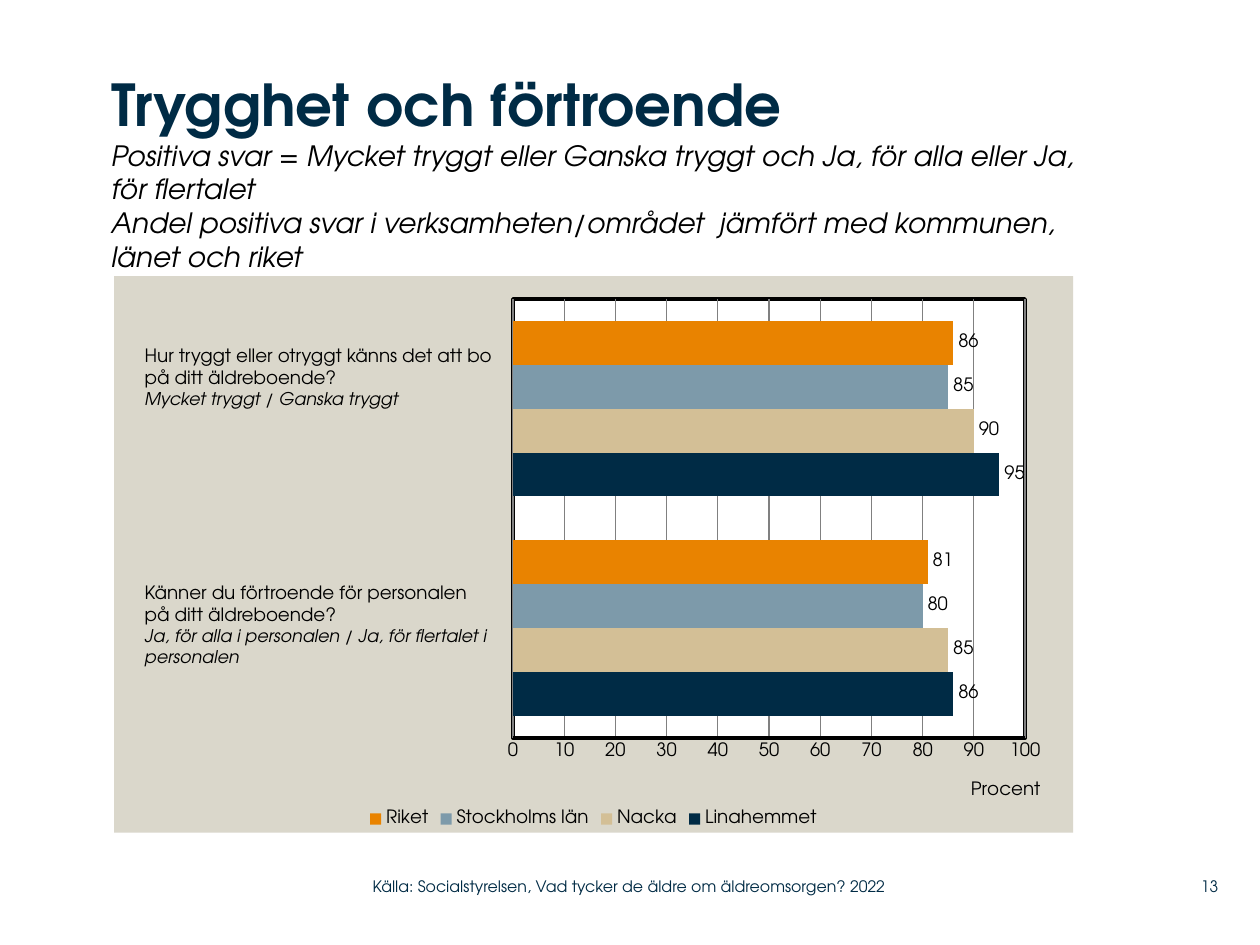
from dataclasses import dataclass

from pptx import Presentation
from pptx.chart.data import CategoryChartData
from pptx.dml.color import RGBColor
from pptx.enum.chart import XL_CHART_TYPE, XL_LABEL_POSITION, XL_LEGEND_POSITION, XL_TICK_MARK
from pptx.enum.text import MSO_ANCHOR, MSO_AUTO_SIZE, PP_ALIGN
from pptx.oxml import parse_xml
from pptx.oxml.ns import nsdecls, qn
from pptx.util import Pt


@dataclass(frozen=True)
class Theme:
    font: str = "TeX Gyre Adventor"
    navy: str = "002B45"
    black: str = "000000"
    sand: str = "D3BF96"
    steel: str = "7D9AAA"
    orange: str = "E98300"
    panel: str = "DAD7CB"
    white: str = "FFFFFF"
    grid: str = "808080"
    heading: float = 33
    subtitle: float = 16
    body: float = 10.5
    answer: float = 10
    footer: float = 9


THEME = Theme()

SERIES = [
    ("Linahemmet", (86, 95), THEME.navy),
    ("Nacka", (85, 90), THEME.sand),
    ("Stockholms län", (80, 85), THEME.steel),
    ("Riket", (81, 86), THEME.orange),
]


def style_font(font, size, color=THEME.black, bold=False, italic=False):
    font.name = THEME.font
    font.size = Pt(size)
    font.color.rgb = RGBColor.from_string(color)
    font.bold = bold
    font.italic = italic


def add_run(paragraph, text, size, color=THEME.black, **style):
    run = paragraph.add_run()
    run.text = text
    style_font(run.font, size, color, **style)


def add_text_frame(slide, left, top, width, height, inset=True):
    frame = slide.shapes.add_textbox(Pt(left), Pt(top), Pt(width), Pt(height)).text_frame
    frame.word_wrap = True
    if not inset:
        frame.margin_left = frame.margin_top = frame.margin_right = frame.margin_bottom = 0
    return frame


def add_title(slide):
    title = add_text_frame(slide, 63.5, 39.5, 558, 118, inset=False).paragraphs[0]
    add_run(title, "Trygghet och förtroende", THEME.heading, THEME.navy, bold=True)
    for line in (
        "Positiva svar = Mycket tryggt eller Ganska tryggt och Ja, för alla eller Ja, för flertalet",
        "Andel positiva svar i verksamheten/området  jämfört med kommunen, länet och riket",
    ):
        title.add_line_break()
        add_run(title, line, THEME.subtitle, italic=True)


def add_question(slide, top, width, height, question_lines, answer):
    """Add a survey question with its positive answers in italics below."""
    frame = add_text_frame(slide, 75.6, top, width, height)
    frame.auto_size = MSO_AUTO_SIZE.SHAPE_TO_FIT_TEXT
    paragraph = frame.paragraphs[0]
    for line in question_lines:
        add_run(paragraph, line, THEME.body)
        paragraph = frame.add_paragraph()
    add_run(paragraph, answer, THEME.answer, italic=True)


def add_footer(slide, left, width, text, align=PP_ALIGN.LEFT):
    frame = add_text_frame(slide, left, 496, width, 21, inset=False)
    frame.vertical_anchor = MSO_ANCHOR.MIDDLE
    frame.paragraphs[0].alignment = align
    add_run(frame.paragraphs[0], text, THEME.footer, THEME.navy)


def set_layout(element, **settings):
    """Give a chart part a manual layout, in fractions of the chart."""
    old_layout = element.find(qn("c:layout"))
    if old_layout is not None:
        element.remove(old_layout)
    rows = "".join(f'<c:{key} val="{value}"/>' for key, value in settings.items())
    layout = parse_xml(
        f'<c:layout {nsdecls("c")}><c:manualLayout>{rows}</c:manualLayout></c:layout>'
    )
    element.insert(0 if element.find(qn("c:tx")) is None else 1, layout)


def area_format(fill, line=None):
    """Return the fill and outline element of a chart area."""
    outline = f'<a:ln w="{Pt(2)}">{solid(line)}</a:ln>' if line else "<a:ln><a:noFill/></a:ln>"
    return parse_xml(f'<c:spPr {nsdecls("c", "a")}>{solid(fill)}{outline}</c:spPr>')


def solid(color):
    return f'<a:solidFill><a:srgbClr val="{color}"/></a:solidFill>'


def style_series(series, color):
    series.format.fill.solid()
    series.format.fill.fore_color.rgb = RGBColor.from_string(color)
    labels = series.data_labels
    labels.show_value = True
    labels.position = XL_LABEL_POSITION.OUTSIDE_END
    style_font(labels.font, THEME.body)


def style_value_axis(axis):
    axis.minimum_scale, axis.maximum_scale, axis.major_unit = 0, 100, 10
    axis.major_tick_mark = axis.minor_tick_mark = XL_TICK_MARK.NONE
    axis.format.line.color.rgb = RGBColor.from_string(THEME.black)
    axis.format.line.width = Pt(2)
    axis.has_major_gridlines = True
    axis.major_gridlines.format.line.color.rgb = RGBColor.from_string(THEME.grid)
    axis.major_gridlines.format.line.width = Pt(0.75)
    style_font(axis.tick_labels.font, THEME.body)
    add_run(axis.axis_title.text_frame.paragraphs[0], "Procent", THEME.body)
    set_layout(axis.axis_title._element, xMode="edge", yMode="edge", x=0.89, y=0.9)


def add_answer_chart(slide):
    data = CategoryChartData()
    data.categories = ["1", "2"]
    for name, values, _ in SERIES:
        data.add_series(name, values)
    chart = slide.shapes.add_chart(
        XL_CHART_TYPE.BAR_CLUSTERED, Pt(65.2), Pt(157.8), Pt(548), Pt(318), data
    ).chart
    style_font(chart.font, THEME.body)
    chart.has_title = False
    chart.has_legend = True
    chart.legend.position = XL_LEGEND_POSITION.BOTTOM
    chart.legend.include_in_layout = False
    style_font(chart.legend.font, THEME.body)

    bars = chart.plots[0]
    bars.gap_width = 100
    bars.vary_by_categories = False
    for series, (_, _, color) in zip(bars.series, SERIES):
        style_series(series, color)
    chart.category_axis.visible = False
    style_value_axis(chart.value_axis)

    chart_part = chart._chartSpace.find(qn("c:chart"))
    chart_part.addnext(area_format(THEME.panel))
    plot_area = chart_part.find(qn("c:plotArea"))
    plot_area.append(area_format(THEME.white, THEME.black))
    set_layout(plot_area, layoutTarget="inner", xMode="edge", yMode="edge",
               x=0.416, y=0.041, w=0.534, h=0.789)


def main():
    deck = Presentation()
    deck.slide_width, deck.slide_height = Pt(720), Pt(540)
    slide = deck.slides.add_slide(deck.slide_layouts[6])
    add_title(slide)
    add_answer_chart(slide)
    add_question(slide, 193, 214.5, 58.3,
                 ["Hur tryggt eller otryggt känns det att bo på ditt äldreboende?"],
                 "Mycket tryggt / Ganska tryggt")
    add_question(slide, 328.3, 216, 70.6,
                 ["Känner du förtroende för personalen", "på ditt äldreboende?"],
                 "Ja, för alla i personalen / Ja, för flertalet i personalen")
    add_footer(slide, 213, 319, "Källa: Socialstyrelsen, Vad tycker de äldre om äldreomsorgen? 2022")
    add_footer(slide, 662.4, 33.8, "13", PP_ALIGN.RIGHT)
    deck.save("out.pptx")


if __name__ == "__main__":
    main()
